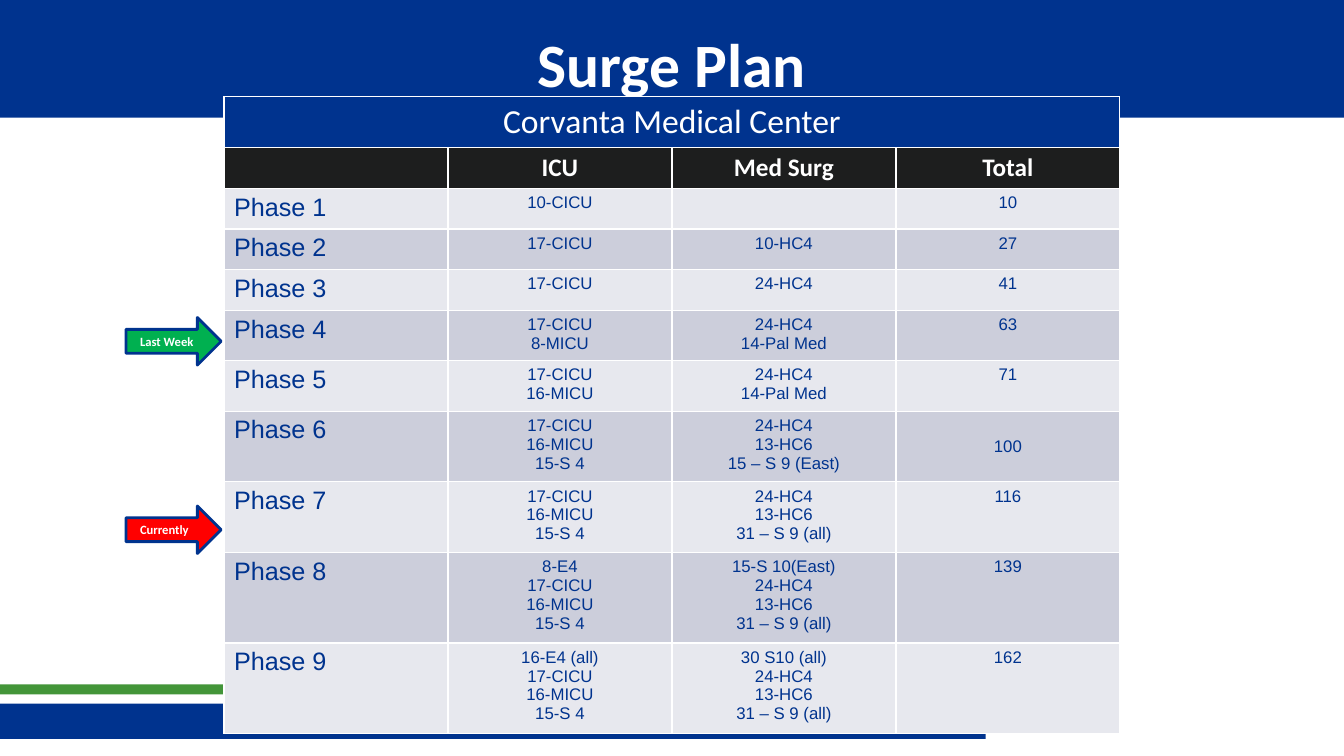
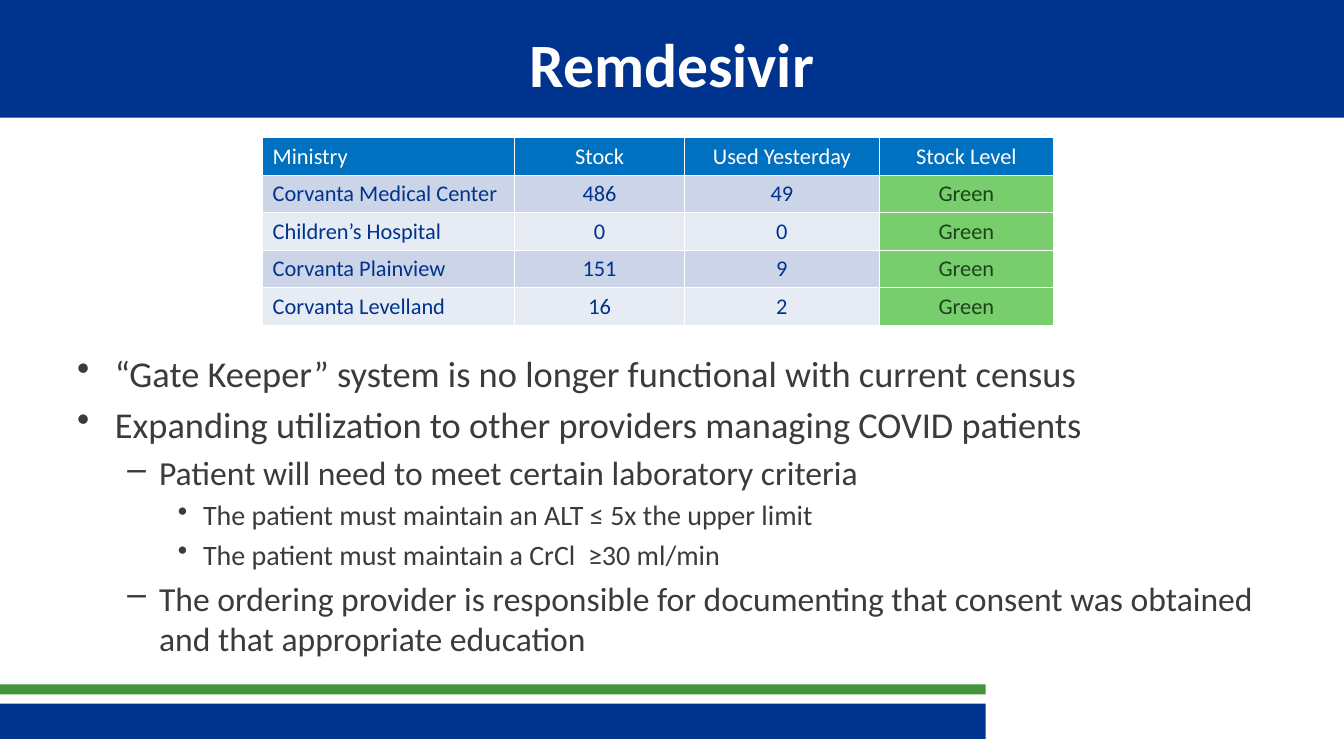
from lxml import etree
from pptx import Presentation
from pptx.dml.color import RGBColor
from pptx.enum.shapes import MSO_SHAPE
from pptx.enum.text import MSO_ANCHOR, PP_ALIGN
from pptx.oxml.ns import qn
from pptx.util import Emu, Pt

RECTANGLE, RIGHT_ARROW = MSO_SHAPE.RECTANGLE, MSO_SHAPE.RIGHT_ARROW
LEFT, CENTER = PP_ALIGN.LEFT, PP_ALIGN.CENTER
TOP, MIDDLE = MSO_ANCHOR.TOP, MSO_ANCHOR.MIDDLE

# The slide is a grid of 48 columns by 27 rows of square cells
COLUMNS, ROWS, CELL = 48, 27, 254000

COLORS = {
    "navy": "00338E", "green": "439539", "white": "FFFFFF", "text": "393B3D",
    "black": "1D1E1E", "gray light": "E7E8EE", "gray dark": "CCCEDB",
    "blue": "0070C0", "blue light": "E7EBF4", "blue dark": "CCD5E8",
    "current": "FF0000", "last week": "00B050",
    "level": "78CD6D", "level text": "1C4418",
}

# Text styles: font, size, colour, bold, alignment
STYLES = {
    "title": ("Calibri", 44, "white", True, CENTER),
    "arrow": ("Calibri", 9, "white", True, LEFT),
    "center name": ("Calibri", 24, "white", False, CENTER),
    "unit head": ("Calibri", 18, "white", True, CENTER),
    "phase": ("Arial", 18, "navy", False, LEFT),
    "beds": ("Arial", 12, "navy", False, CENTER),
    "ministry head": ("Calibri", 16, "white", False, LEFT),
    "stock head": ("Calibri", 16, "white", False, CENTER),
    "ministry": ("Calibri", 16, "navy", False, LEFT),
    "stock": ("Calibri", 16, "navy", False, CENTER),
    "level": ("Calibri", 16, "level text", False, CENTER),
    "bullet 0": ("Calibri", 26, "text", False, LEFT),
    "bullet 1": ("Calibri", 24, "text", False, LEFT),
    "bullet 2": ("Calibri", 20, "text", False, LEFT),
}

# Bullet levels: character, left margin and hanging indent in grid columns
BULLETS = [("•", 1.35, 1.35), ("–", 2.93, 1.13), ("•", 4.5, 0.9)]


def grid(cells):
    return Emu(round(cells * CELL))


def color(name):
    return RGBColor.from_string(COLORS[name])


class Deck:
    """Holds the style and the current slide; lengths are grid cells."""

    def __init__(self):
        self.presentation = Presentation()
        self.presentation.slide_width = grid(COLUMNS)
        self.presentation.slide_height = grid(ROWS)
        self.slide = None

    def new_slide(self, title):
        blank = self.presentation.slide_layouts[6]
        self.slide = self.presentation.slides.add_slide(blank)
        # Footer bands and title band
        self.shape(RECTANGLE, 0, 25.13, 35.2, 1.26, "navy")
        self.shape(RECTANGLE, 0, 24.44, 35.2, 0.36, "green")
        self.shape(RECTANGLE, 0, 0, COLUMNS, 4.2, "navy")
        frame = self.text_box(2.4, 0.6, 43.2, 3.3, MIDDLE)
        self.styled_run(frame.paragraphs[0], title, "title")

    def shape(self, kind, left, top, width, height, fill, line=None):
        shape = self.slide.shapes.add_shape(
            kind, grid(left), grid(top), grid(width), grid(height))
        shape.shadow.inherit = False
        shape.fill.solid()
        shape.fill.fore_color.rgb = color(fill)
        if line:
            shape.line.color.rgb = color(line)
            shape.line.width = Pt(2)
        else:
            shape.line.fill.background()
        return shape

    def text_box(self, left, top, width, height, anchor=TOP):
        box = self.slide.shapes.add_textbox(
            grid(left), grid(top), grid(width), grid(height))
        box.text_frame.word_wrap = True
        box.text_frame.vertical_anchor = anchor
        return box.text_frame

    def styled_run(self, paragraph, text, style):
        font_name, size, font_color, bold, alignment = STYLES[style]
        paragraph.alignment = alignment
        run = paragraph.add_run()
        run.text = text
        run.font.name = font_name
        run.font.size = Pt(size)
        run.font.bold = bold
        run.font.color.rgb = color(font_color)

    def text_lines(self, frame, lines, style):
        for index, line in enumerate(lines):
            paragraph = frame.add_paragraph() if index else frame.paragraphs[0]
            self.styled_run(paragraph, line, style)

    def arrow(self, label, top, fill):
        arrow = self.shape(RIGHT_ARROW, 4.5, top, 3.4, 1.7, fill, "navy")
        frame = arrow.text_frame
        frame.word_wrap = True
        frame.vertical_anchor = MIDDLE
        frame.margin_left = grid(0.5)
        frame.margin_right = frame.margin_top = frame.margin_bottom = 0
        self.styled_run(frame.paragraphs[0], label, "arrow")

    def bullets(self, left, top, width, height, items):
        frame = self.text_box(left, top, width, height)
        for index, (level, text) in enumerate(items):
            paragraph = frame.add_paragraph() if index else frame.paragraphs[0]
            character, margin, hang = BULLETS[level]
            properties = paragraph._p.get_or_add_pPr()
            properties.set("marL", str(grid(margin)))
            properties.set("indent", str(-grid(hang)))
            etree.SubElement(properties, qn("a:buChar"), char=character)
            style = f"bullet {level}"
            if index:
                paragraph.space_before = Pt(STYLES[style][1] * 0.2)
            self.styled_run(paragraph, text, style)

    def table(self, left, top, widths, heights, rows):
        """Each entry of a row is (text, text style, fill)."""
        table = self.slide.shapes.add_table(
            len(heights), len(widths), grid(left), grid(top),
            grid(sum(widths)), grid(sum(heights))).table
        table.first_row = table.horz_banding = False
        for column, width in zip(table.columns, widths):
            column.width = grid(width)
        for row, height, entries in zip(table.rows, heights, rows):
            row.height = grid(height)
            for cell, (text, style, fill) in zip(row.cells, entries):
                self.borders(cell)
                cell.fill.solid()
                cell.fill.fore_color.rgb = color(fill)
                if text:
                    self.text_lines(cell.text_frame, text.split("\n"), style)
        return table

    def borders(self, cell):
        properties = cell._tc.get_or_add_tcPr()
        for side in "LRTB":
            line = etree.SubElement(properties, qn(f"a:ln{side}"), w=str(Pt(1)))
            fill = etree.SubElement(line, qn("a:solidFill"))
            etree.SubElement(fill, qn("a:srgbClr"), val=COLORS["white"])


# Beds in each phase: ICU, Med Surg, total
PHASES = [
    ("10-CICU", "", "10"),
    ("17-CICU", "10-HC4", "27"),
    ("17-CICU", "24-HC4", "41"),
    ("17-CICU\n8-MICU", "24-HC4\n14-Pal Med", "63"),
    ("17-CICU\n16-MICU", "24-HC4\n14-Pal Med", "71"),
    ("17-CICU\n16-MICU\n15-S 4", "24-HC4\n13-HC6\n15 – S 9 (East)", "100"),
    ("17-CICU\n16-MICU\n15-S 4", "24-HC4\n13-HC6\n31 – S 9 (all)", "116"),
    ("8-E4\n17-CICU\n16-MICU\n15-S 4",
     "15-S 10(East)\n24-HC4\n13-HC6\n31 – S 9 (all)", "139"),
    ("16-E4 (all)\n17-CICU\n16-MICU\n15-S 4",
     "30 S10 (all)\n24-HC4\n13-HC6\n31 – S 9 (all)", "162"),
]
PHASE_HEIGHTS = {1: 1.45, 2: 1.78, 3: 2.5, 4: 3.2}  # by number of lines

STOCK_HEAD = ("Ministry", "Stock", "Used Yesterday", "Stock Level")
STOCKS = [
    ("Corvanta Medical Center", "486", "49", "Green"),
    ("Children’s Hospital", "0", "0", "Green"),
    ("Corvanta Plainview", "151", "9", "Green"),
    ("Corvanta Levelland", "16", "2", "Green"),
]

CRITERIA = [
    (0, "“Gate Keeper” system is no longer functional with current census"),
    (0, "Expanding utilization to other providers managing COVID patients"),
    (1, "Patient will need to meet certain laboratory criteria"),
    (2, "The patient must maintain an ALT ≤ 5x the upper limit"),
    (2, "The patient must maintain a CrCl  ≥30 ml/min"),
    (1, "The ordering provider is responsible for documenting that consent "
        "was obtained and that appropriate education"),
]


def surge_plan(deck):
    deck.new_slide("Surge Plan")
    # Phase table
    names = ("Corvanta Medical Center", "", "", "")
    units = ("", "ICU", "Med Surg", "Total")
    rows = [[(name, "center name", "navy") for name in names],
            [(unit, "unit head", "black") for unit in units]]
    heights = [1.82, 1.45]
    for number, beds in enumerate(PHASES, 1):
        fill = "gray light" if number % 2 else "gray dark"
        rows.append([(f"Phase {number}", "phase", fill)]
                    + [(text, "beds", fill) for text in beds])
        heights.append(PHASE_HEIGHTS[len(beds[0].split("\n"))])
    phases = deck.table(8, 3.46, [8] * 4, heights, rows)
    phases.cell(0, 0).merge(phases.cell(0, 3))
    phases.cell(7, 3).vertical_anchor = MIDDLE
    # Phase markers
    deck.arrow("Currently", 18.07, "current")
    deck.arrow("Last Week", 11.34, "last week")


def remdesivir(deck):
    deck.new_slide("Remdesivir")
    deck.bullets(2.4, 12.35, 43.2, 11.95, CRITERIA)
    # Stock table
    head_styles = ["ministry head"] + ["stock head"] * 3
    rows = [[(text, style, "blue")
             for text, style in zip(STOCK_HEAD, head_styles)]]
    for index, stock in enumerate(STOCKS):
        band = "blue light" if index % 2 else "blue dark"
        styles = ("ministry", "stock", "stock", "level")
        fills = (band, band, band, "level")
        rows.append(list(zip(stock, styles, fills)))
    deck.table(9.38, 4.92, [9, 6.07, 6.95, 6.23], [1.34] * len(rows), rows)


def main():
    deck = Deck()
    surge_plan(deck)
    remdesivir(deck)
    deck.presentation.save("out.pptx")


if __name__ == "__main__":
    main()
